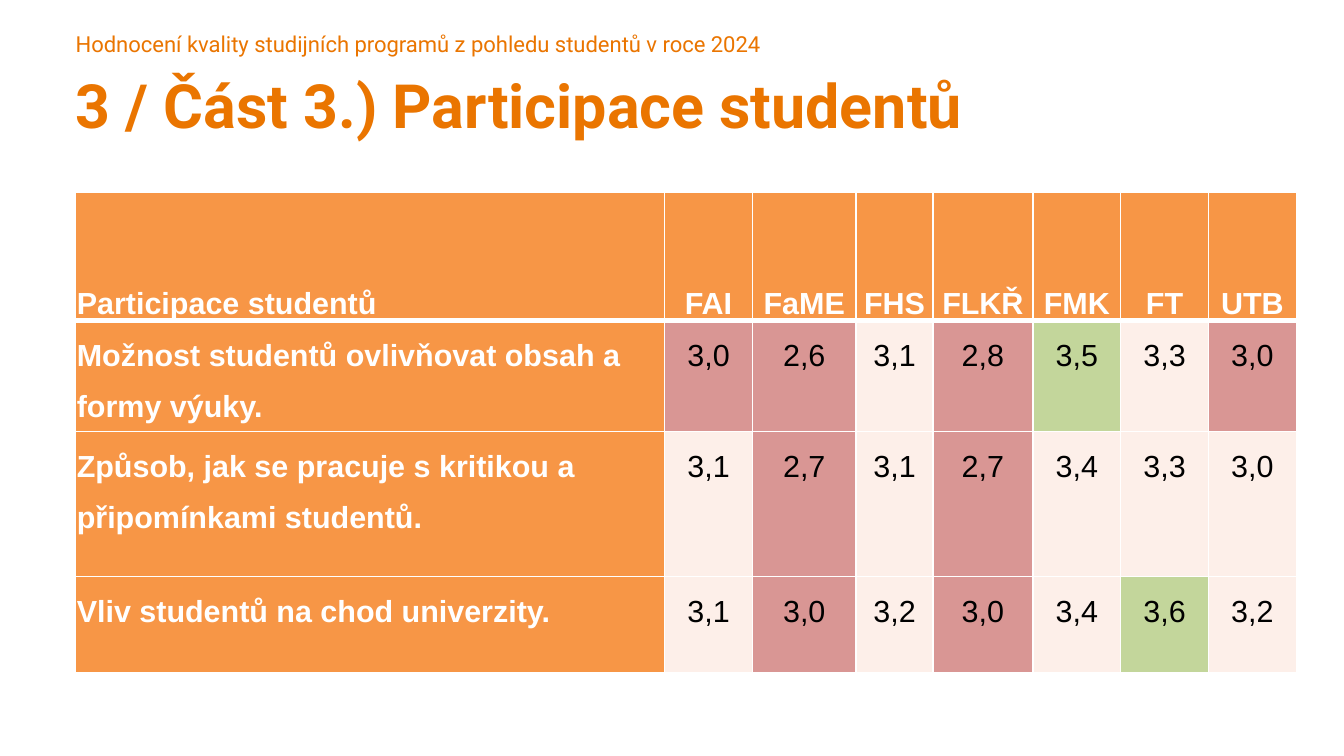
import pptx
import pptx.util
import pptx.dml.color
import pptx.enum.text
import lxml.etree

Inches = pptx.util.Inches
Pt = pptx.util.Pt
ALIGN = pptx.enum.text.PP_ALIGN
ANCHOR = pptx.enum.text.MSO_ANCHOR
A = "http://schemas.openxmlformats.org/drawingml/2006/main"

ACCENT, ORANGE, WHITE, BLACK = "EA7500", "F79646", "FFFFFF", "000000"
RATING_FILLS = {"low": "D99694", "mid": "FDEFE9", "high": "C3D69B"}

FACULTIES = ["FAI", "FaME", "FHS", "FLKŘ", "FMK", "FT", "UTB"]
QUESTIONS = [
    ("Možnost studentů ovlivňovat obsah a formy výuky.",
     ["3,0", "2,6", "3,1", "2,8", "3,5", "3,3", "3,0"],
     ["low", "low", "mid", "low", "high", "mid", "low"]),
    ("Způsob, jak se pracuje s kritikou a připomínkami studentů.",
     ["3,1", "2,7", "3,1", "2,7", "3,4", "3,3", "3,0"],
     ["mid", "low", "mid", "low", "mid", "mid", "mid"]),
    ("Vliv studentů na chod univerzity.",
     ["3,1", "3,0", "3,2", "3,0", "3,4", "3,6", "3,2"],
     ["mid", "low", "mid", "low", "mid", "high", "mid"]),
]
COLUMN_WIDTHS = [4.83, 0.72, 0.85, 0.63, 0.82, 0.72, 0.72, 0.72]
ROW_HEIGHTS = [1.05, 0.91, 1.19, 0.79]


def rgb(code):
    return pptx.dml.color.RGBColor.from_string(code)


def add_run(paragraph, words, size, font, color, bold=False):
    run = paragraph.add_run()
    run.text = words
    run.font.size = Pt(size)
    run.font.name = font
    run.font.bold = bold
    run.font.color.rgb = rgb(color)


def add_heading(slide, box, words, size, bold=False):
    frame = slide.shapes.add_textbox(*map(Inches, box)).text_frame
    frame.word_wrap = True
    frame.margin_left = frame.margin_right = 0
    frame.margin_top = frame.margin_bottom = 0
    add_run(frame.paragraphs[0], words, size, "Roboto", ACCENT, bold)


def set_borders(cell, widths):
    properties = cell._tc.get_or_add_tcPr()
    for side, width in zip(("lnL", "lnR", "lnT", "lnB"), widths):
        line = lxml.etree.SubElement(properties, f"{{{A}}}{side}", w=str(Pt(width)))
        fill = lxml.etree.SubElement(line, f"{{{A}}}solidFill")
        lxml.etree.SubElement(fill, f"{{{A}}}srgbClr", val=WHITE)


def fill_cell(cell, words, fill, color, bold, centered, header, top):
    set_borders(cell, (1, 1, top, 3 if header else 1))
    cell.fill.solid()
    cell.fill.fore_color.rgb = rgb(fill)
    narrow = header and centered
    cell.margin_left = cell.margin_right = Inches(0.05 if narrow else 0.01)
    cell.margin_top = Inches(0 if narrow else 0.01)
    cell.margin_bottom = 0
    cell.vertical_anchor = ANCHOR.BOTTOM if header else ANCHOR.TOP
    paragraph = cell.text_frame.paragraphs[0]
    paragraph.alignment = ALIGN.CENTER if centered else ALIGN.LEFT
    paragraph.line_spacing = 1.5
    if centered and not header:
        paragraph.space_after = Pt(6)
    add_run(paragraph, words, 18, "Arial", color, bold)


def add_ratings(slide, box):
    table = slide.shapes.add_table(
        len(ROW_HEIGHTS), len(COLUMN_WIDTHS), *map(Inches, box)).table
    for column, width in zip(table.columns, COLUMN_WIDTHS):
        column.width = Inches(width)
    for row, height in zip(table.rows, ROW_HEIGHTS):
        row.height = Inches(height)

    for c, label in enumerate(["Participace studentů"] + FACULTIES):
        fill_cell(table.cell(0, c), label, ORANGE, WHITE, True, c > 0, True, 1)
    for r, (question, scores, ratings) in enumerate(QUESTIONS, 1):
        top = 3 if r == 1 else 1
        fill_cell(table.cell(r, 0), question, ORANGE, WHITE, True, False, False, top)
        for c, (score, rating) in enumerate(zip(scores, ratings), 1):
            fill_cell(table.cell(r, c), score, RATING_FILLS[rating],
                      BLACK, False, True, False, top)


def main():
    deck = pptx.Presentation()
    deck.slide_width, deck.slide_height = Inches(11.02), Inches(6.2)
    slide = deck.slides.add_slide(deck.slide_layouts[6])
    add_heading(slide, (0.62, 0.25, 9.92, 0.22),
                "Hodnocení kvality studijních programů z pohledu studentů v roce 2024", 13)
    add_heading(slide, (0.62, 0.55, 10.18, 0.61),
                "3 / Část 3.) Participace studentů", 36, True)
    add_ratings(slide, (0.62, 1.58, sum(COLUMN_WIDTHS), sum(ROW_HEIGHTS)))
    deck.save("out.pptx")


if __name__ == "__main__":
    main()
